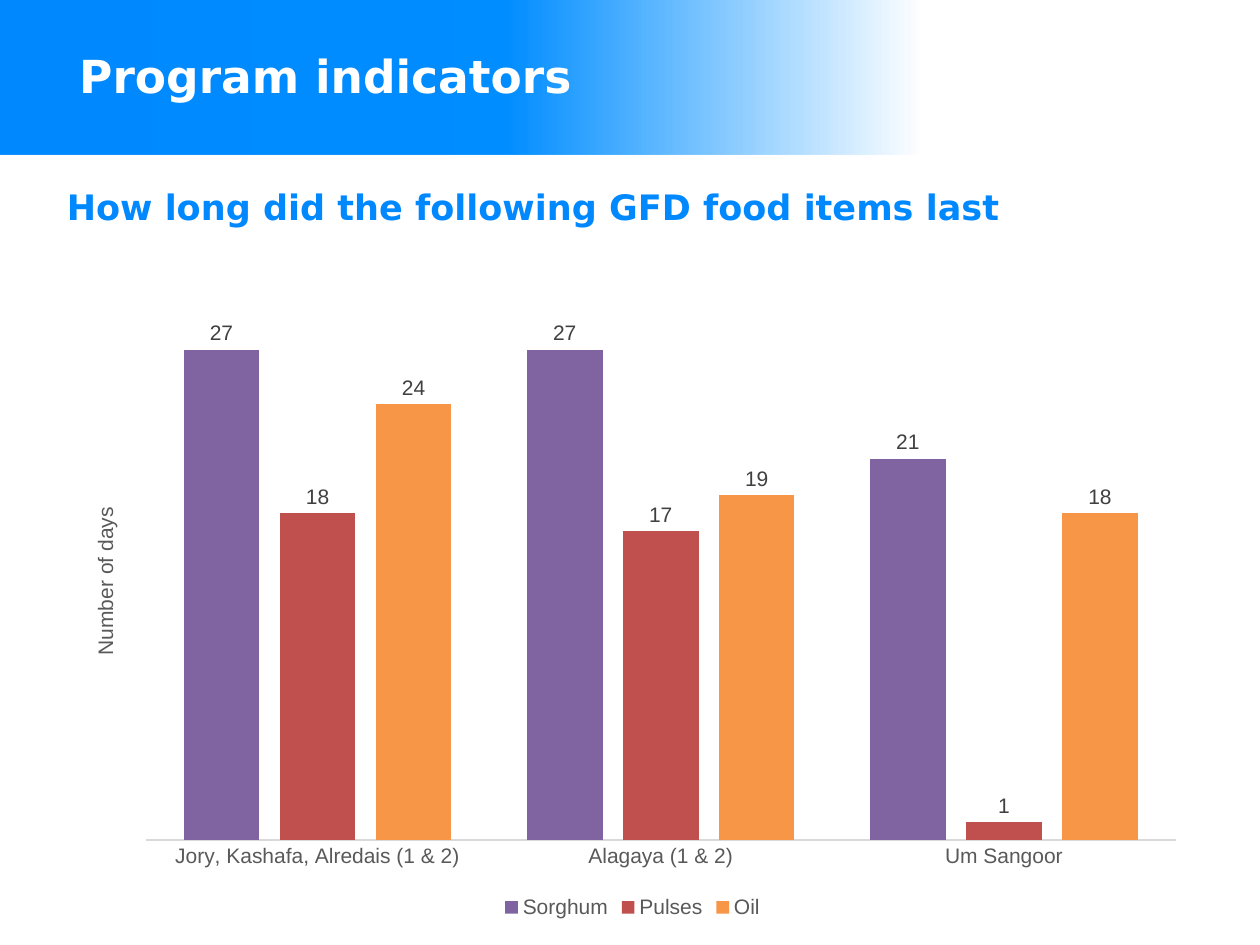
from lxml import etree
from pptx import Presentation
from pptx.chart.data import CategoryChartData
from pptx.dml.color import RGBColor
from pptx.enum import chart as ch, shapes, text
from pptx.oxml import parse_xml
from pptx.oxml.ns import nsdecls, qn
from pptx.util import Inches, Pt

# Content
TITLE = "Program indicators"
QUESTION = "How long did the following GFD food items last"
AXIS_TITLE = "Number of days"
PLACES = ["Jory, Kashafa, Alredais (1 & 2)", "Alagaya (1 & 2)", "Um Sangoor"]
BLUE, WHITE = RGBColor(0x00, 0x88, 0xFF), RGBColor(0xFF, 0xFF, 0xFF)
GREY, DARK = RGBColor(0x59, 0x59, 0x59), RGBColor(0x40, 0x40, 0x40)
PALE = RGBColor(0xD9, 0xD9, 0xD9)
ITEMS = [
    ("Sorghum", (27, 27, 21), RGBColor(0x80, 0x64, 0xA2)),
    ("Pulses", (18, 17, 1), RGBColor(0xC0, 0x50, 0x4D)),
    ("Oil", (24, 19, 18), RGBColor(0xF7, 0x96, 0x46)),
]
# Banner gradient: position %, colour, opacity %
STOPS = [(0, "0088FF", 100), (40, "008DFF", 100), (73, "0091FF", 0)]
# Plot area as shares of the chart frame
PLOT = {"x": 0.07, "y": 0.02, "w": 0.91, "h": 0.85}

# Layout
WIDTH, HEIGHT = 10, 7.5
LEFT, CONTENT_WIDTH = 0.53, 8.98


def style(font, size, color, name="Arial", bold=False):
    font.size, font.name, font.bold = Pt(size), name, bold
    font.color.rgb = color


def add_heading(page, words, area, size, color, insets, anchor):
    box = page.shapes.add_textbox(*map(Inches, area))
    frame = box.text_frame
    frame.word_wrap = True
    frame.vertical_anchor = anchor
    (frame.margin_left, frame.margin_top,
     frame.margin_right, frame.margin_bottom) = map(Inches, insets)
    para = frame.paragraphs[0]
    para.text = words
    style(para.font, size, color, "DejaVu Sans", True)


deck = Presentation()
deck.slide_width, deck.slide_height = Inches(WIDTH), Inches(HEIGHT)
page = deck.slides.add_slide(deck.slide_layouts[6])

# Banner fading to the right
banner = page.shapes.add_shape(shapes.MSO_SHAPE.RECTANGLE, 0, 0, Inches(WIDTH), Inches(1.23))
banner.shadow.inherit = False
banner.line.fill.background()
banner.fill.gradient()
banner.fill.gradient_angle = 0
stop_list = banner.fill._fill._gradFill.find(qn("a:gsLst"))
for old in list(stop_list):
    stop_list.remove(old)
for position, color, opacity in STOPS:
    stop_list.append(parse_xml(
        f'<a:gs {nsdecls("a")} pos="{position * 1000}"><a:srgbClr val="{color}">'
        f'<a:alpha val="{opacity * 1000}"/></a:srgbClr></a:gs>'))

# Headings
add_heading(page, QUESTION, (LEFT, 1.47, CONTENT_WIDTH, 0.46), 20, BLUE,
            (0, 0, 0, 0), text.MSO_ANCHOR.TOP)
add_heading(page, TITLE, (LEFT, 0.13, 6.48, 1.01), 26, WHITE,
            (0.1, 0, 0.1, 0.07), text.MSO_ANCHOR.MIDDLE)

# Chart
data = CategoryChartData(number_format="0")
data.categories = PLACES
for name, days, _ in ITEMS:
    data.add_series(name, days)
chart = page.shapes.add_chart(
    ch.XL_CHART_TYPE.COLUMN_CLUSTERED,
    *map(Inches, (LEFT, 2.24, CONTENT_WIDTH, 5.09)), data).chart
style(chart.font, 12, GREY)
chart.has_title = False
chart.has_legend = True
chart.legend.position = ch.XL_LEGEND_POSITION.BOTTOM
chart.legend.include_in_layout = False
style(chart.legend.font, 12, GREY)

# Columns and their labels
plot = chart.plots[0]
plot.gap_width, plot.overlap, plot.vary_by_categories = 100, -27, False
for series, (_, _, color) in zip(plot.series, ITEMS):
    series.format.fill.solid()
    series.format.fill.fore_color.rgb = color
    labels = series.data_labels
    labels.show_value = True
    labels.position = ch.XL_LABEL_POSITION.OUTSIDE_END
    style(labels.font, 12, DARK)

# Axes
places = chart.category_axis
places.major_tick_mark = ch.XL_TICK_MARK.NONE
places.format.line.color.rgb = PALE
places.format.line.width = Pt(0.75)
style(places.tick_labels.font, 12, GREY)
days = chart.value_axis
days.minimum_scale, days.maximum_scale = 0, 30
days.has_major_gridlines = False
days.has_title = True
para = days.axis_title.text_frame.paragraphs[0]
para.text = AXIS_TITLE
style(para.font, 12, GREY)
body = days.axis_title.text_frame._txBody.find(qn("a:bodyPr"))
body.set("rot", "-5400000")
body.set("vert", "horz")
days.visible = False

# Fixed plot area
area = chart._chartSpace.chart.plotArea
for old in area.findall(qn("c:layout")):
    area.remove(old)
layout = parse_xml(f'<c:layout {nsdecls("c")}><c:manualLayout/></c:layout>')
modes = {"layoutTarget": "inner", "xMode": "edge", "yMode": "edge"}
for tag, value in {**modes, **PLOT}.items():
    etree.SubElement(layout[0], qn(f"c:{tag}")).set("val", str(value))
area.insert(0, layout)

deck.save("out.pptx")
